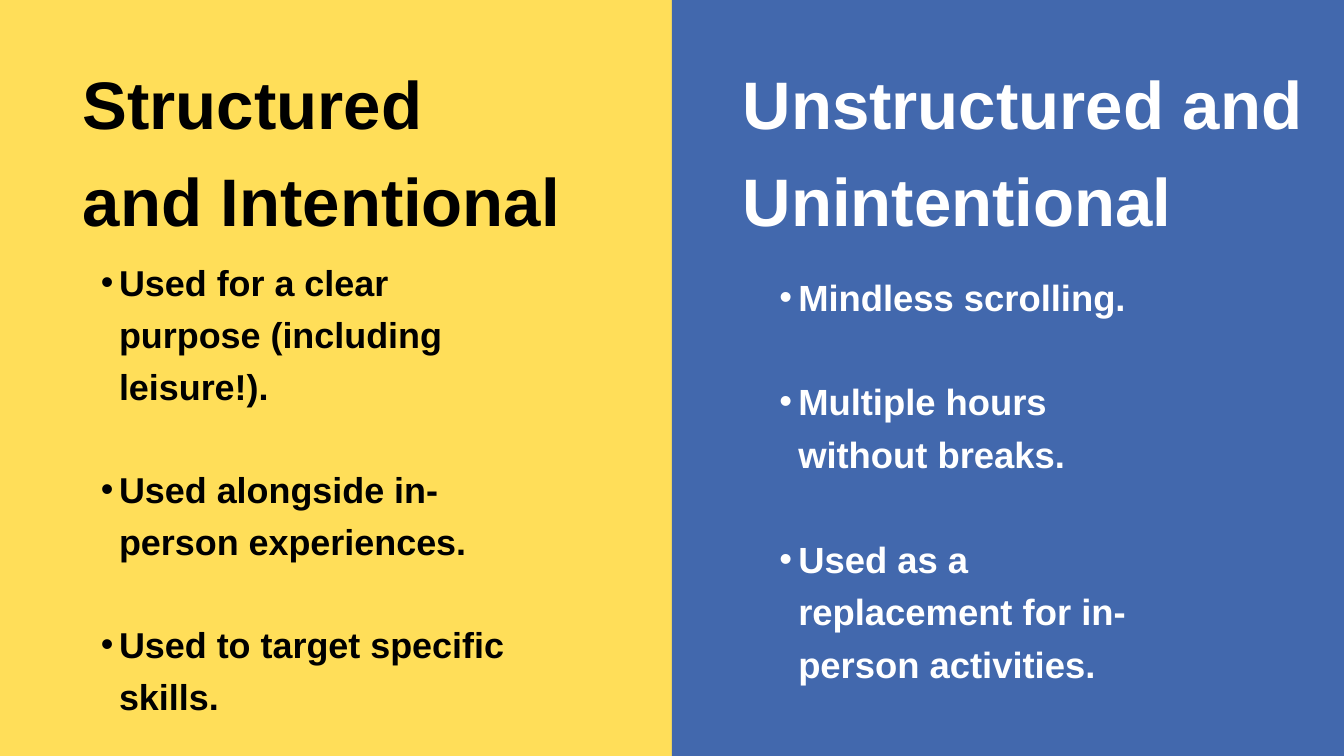
from lxml import etree
from pptx import Presentation
from pptx.dml.color import RGBColor
from pptx.enum.shapes import MSO_SHAPE
from pptx.enum.text import MSO_AUTO_SIZE
from pptx.oxml.ns import qn
from pptx.util import Pt

YELLOW = RGBColor(0xFF, 0xDE, 0x59)
BLUE = RGBColor(0x42, 0x68, 0xAD)
BLACK = RGBColor(0, 0, 0)
WHITE = RGBColor(0xFF, 0xFF, 0xFF)

FONT = "Arial"
TITLE_SIZE = 72
LEADING = 1.44  # line pitch as a multiple of the text size


def add_box(slide, left, top, width, height):
    """Wrapping text box without margins."""
    sp = slide.shapes.add_textbox(Pt(left), Pt(top), Pt(width), Pt(height))
    tf = sp.text_frame
    tf.word_wrap = True
    tf.auto_size = MSO_AUTO_SIZE.SHAPE_TO_FIT_TEXT
    tf.margin_left = tf.margin_top = tf.margin_right = tf.margin_bottom = 0
    return tf


def add_bullet(p, indent, color):
    pPr = p._p.get_or_add_pPr()
    pPr.set("marL", str(Pt(indent)))
    pPr.set("indent", str(-Pt(indent / 2)))
    clr = etree.SubElement(pPr, qn("a:buClr"))
    etree.SubElement(clr, qn("a:srgbClr")).set("val", str(color))
    etree.SubElement(pPr, qn("a:buFont")).set("typeface", FONT)
    etree.SubElement(pPr, qn("a:buChar")).set("char", "•")


def write_paragraphs(tf, texts, size, color, indent=None):
    """Write one paragraph per text; bulleted items stand one line apart."""
    pitch = Pt(round(size * LEADING, 2))
    for i, text in enumerate(texts):
        p = tf.paragraphs[0] if i == 0 else tf.add_paragraph()
        if indent:
            p.level = 1
            add_bullet(p, indent, color)
            if i:
                p.space_before = pitch
        p.line_spacing = pitch
        r = p.add_run()
        r.text = text
        r.font.name = FONT
        r.font.size = Pt(size)
        r.font.bold = True
        r.font.color.rgb = color


def add_panel(slide, box, fill, color, title, title_x, items, item_box, size, indent):
    """Coloured half with a title and a bulleted list, placed relative to box."""
    left, top, width, height = box

    # Background
    sp = slide.shapes.add_shape(
        MSO_SHAPE.RECTANGLE, Pt(left), Pt(top), Pt(width), Pt(height))
    sp.shadow.inherit = False
    sp.fill.solid()
    sp.fill.fore_color.rgb = fill
    sp.line.fill.background()

    # Title
    tf = add_box(slide, left + title_x, top + 49.7, 644.4, 208)
    write_paragraphs(tf, title, TITLE_SIZE, color)

    # Bulleted list
    x, y, w, h = item_box
    tf = add_box(slide, left + x, top + y, w, h)
    write_paragraphs(tf, items, size, color, indent)


def main():
    prs = Presentation()
    prs.slide_width, prs.slide_height = Pt(1440), Pt(810)
    s = prs.slides.add_slide(prs.slide_layouts[6])

    add_panel(
        s, (0, 0, 720, 810), YELLOW, BLACK,
        ["Structured", "and Intentional"], 88.6,
        ["Used for a clear purpose (including leisure!).",
         "Used alongside in-person experiences.",
         "Used to target specific skills."],
        (88.6, 270, 486, 495), 38.5, 38.9)
    add_panel(
        s, (720, 0, 720, 810), BLUE, WHITE,
        ["Unstructured and Unintentional"], 75.6,
        ["Mindless scrolling.",
         "Multiple hours without breaks.",
         "Used as a replacement for in-person activities."],
        (95, 285, 426, 444), 39, 40.3)

    prs.save("out.pptx")


if __name__ == "__main__":
    main()
